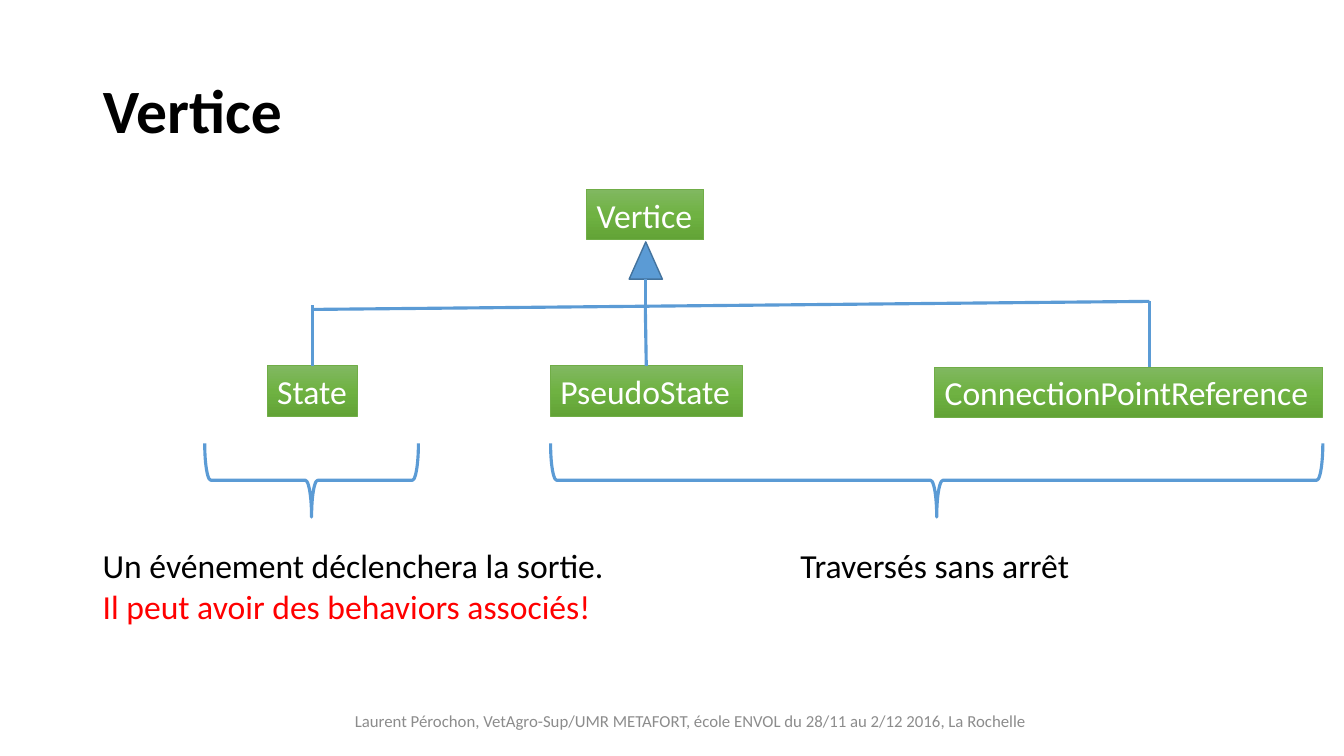
from copy import deepcopy

from lxml import etree
from pptx import Presentation
from pptx.dml.color import RGBColor
from pptx.enum.shapes import MSO_CONNECTOR, MSO_SHAPE
from pptx.enum.text import MSO_ANCHOR, MSO_AUTO_SIZE, PP_ALIGN
from pptx.oxml.ns import qn
from pptx.util import Inches, Pt

LINE = MSO_CONNECTOR.STRAIGHT
RECT, TRIANGLE, BRACE = MSO_SHAPE.RECTANGLE, MSO_SHAPE.ISOSCELES_TRIANGLE, MSO_SHAPE.RIGHT_BRACE
TOP, MIDDLE = MSO_ANCHOR.TOP, MSO_ANCHOR.MIDDLE
LEFT, CENTER = PP_ALIGN.LEFT, PP_ALIGN.CENTER
GROW = MSO_AUTO_SIZE.SHAPE_TO_FIT_TEXT

W, H = 13.33, 7.5
FONT = "Calibri"
COLORS = {
    "black": "000000", "white": "FFFFFF", "red": "FF0000", "grey": "8C8C8C",
    "blue": "5B9BD5", "blue_edge": "43739E", "green_edge": "70AD47",
    "green_top": "81B861", "green_mid": "6FB242", "green_bottom": "62A336",
}
NODE_H = 0.5
BRACE_H = 0.73


def rgb(name):
    return RGBColor.from_string(COLORS[name])


def inches(*lengths):
    return [Inches(v) for v in lengths]


def write(sp, *lines, size=24, color="black", bold=False, align=LEFT,
          anchor=TOP, wrap=False, spacing=None):
    """Each line is a string, or a (string, colour) pair."""
    tf = sp.text_frame
    tf.word_wrap, tf.vertical_anchor = wrap, anchor
    tf.auto_size = MSO_AUTO_SIZE.NONE if wrap else GROW
    for i, line in enumerate(lines):
        text, shade = (line, color) if isinstance(line, str) else line
        p = tf.add_paragraph() if i else tf.paragraphs[0]
        p.alignment, p.line_spacing = align, spacing
        r = p.add_run()
        r.text = text
        r.font.name, r.font.size, r.font.bold = FONT, Pt(size), bold
        r.font.color.rgb = rgb(shade)


def add_text(s, box, *lines, **fmt):
    write(s.shapes.add_textbox(*inches(*box)), *lines, **fmt)


def add_shape(s, kind, box, edge, width):
    sp = s.shapes.add_shape(kind, *inches(*box))
    sp.shadow.inherit = False
    sp.line.color.rgb, sp.line.width = rgb(edge), Pt(width)
    return sp


def add_node(s, box, name):
    sp = add_shape(s, RECT, box, "green_edge", 0.5)
    sp.fill.gradient()
    sp.fill.gradient_angle = 270
    stops = sp.fill.gradient_stops
    for stop, shade, position in zip(stops, ("green_top", "green_bottom"), (0, 1)):
        stop.color.rgb, stop.position = rgb(shade), position
    first = sp._element.spPr.find(qn("a:gradFill")).find(qn("a:gsLst"))[0]
    middle = deepcopy(first)
    middle.set("pos", "50000")
    middle.find(qn("a:srgbClr")).set("val", COLORS["green_mid"])
    first.addnext(middle)
    write(sp, name, color="white")
    return sp


def add_line(s, start, end, child=None):
    """Draw a line; with a child, end it at the middle of the child's top."""
    c = s.shapes.add_connector(LINE, *inches(*start, *end))
    c.line.color.rgb, c.line.width = rgb("blue"), Pt(2.25)
    etree.SubElement(c._element.spPr, qn("a:effectLst"))
    if child is not None:
        c.end_connect(child, 0)


def add_brace(s, x, y, w):
    """Brace pointing down, w wide: a right brace turned about its centre."""
    box = (x + (w - BRACE_H) / 2, y - (w - BRACE_H) / 2, BRACE_H, w)
    sp = add_shape(s, BRACE, box, "blue", 2.25)
    sp.fill.background()
    sp.rotation = 90


def add_title(s, x, y, w, h):
    title = s.shapes.title
    title.left, title.top, title.width, title.height = inches(x, y, w, h)
    write(title, "Vertice", size=44, bold=True, anchor=MIDDLE, wrap=True, spacing=0.9)


def add_hierarchy(s, x, y, w, h):
    row = y + h - NODE_H
    parent_x, stem = x + 3.17, x + 3.75
    add_node(s, (parent_x, y, 1.16, NODE_H), "Vertice")
    reference = (x + w - 3.85, row + 0.01, 3.85, NODE_H)
    add_node(s, reference, "ConnectionPointReference")
    pseudo = add_node(s, (x + 2.81, row, 1.9, NODE_H), "PseudoState")
    state = add_node(s, (x, row, 0.9, NODE_H), "State")

    arrow = add_shape(s, TRIANGLE, (stem - 0.16, y + 0.52, 0.33, 0.37), "blue_edge", 1)
    arrow.fill.solid()
    arrow.fill.fore_color.rgb = rgb("blue")

    left, right, bar = x + 0.45, x + 8.75, y + 1.15
    add_line(s, (left, bar + 0.04), (right, bar - 0.04))
    add_line(s, (stem, y + 0.89), (stem, bar))
    add_line(s, (left, bar), (left, row), state)
    add_line(s, (stem, bar), (stem, row), pseudo)
    add_line(s, (right, bar - 0.04), (right, row + 0.01))


def add_remarks(s, x, y, w):
    add_brace(s, x + w - 7.66, y, 7.66)
    add_brace(s, x + 1.11, y, 2.12)
    text_y = y + 0.96
    add_text(s, (x + 6.92, text_y, 2.9, 0.5), "Traversés sans arrêt")
    add_text(s, (x, text_y, 5.22, 0.91), "Un événement déclenchera la sortie.",
             ("Il peut avoir des behaviors associés!", "red"))


def add_footer(s, *box):
    add_text(s, box, "Laurent Pérochon, VetAgro-Sup/UMR METAFORT, école ENVOL "
             "du 28/11 au 2/12 2016, La Rochelle",
             size=12, color="grey", align=CENTER, anchor=MIDDLE, wrap=True)


def main():
    prs = Presentation()
    prs.slide_width, prs.slide_height = inches(W, H)
    s = prs.slides.add_slide(prs.slide_layouts[5])
    add_title(s, 0.92, 0.4, 11.5, 1.45)
    add_footer(s, 2.3, 6.95, 9.1, 0.4)
    add_hierarchy(s, 2.65, 1.88, 10.47, 2.25)
    add_remarks(s, 0.92, 4.4, 12.2)
    prs.save("out.pptx")


if __name__ == "__main__":
    main()
